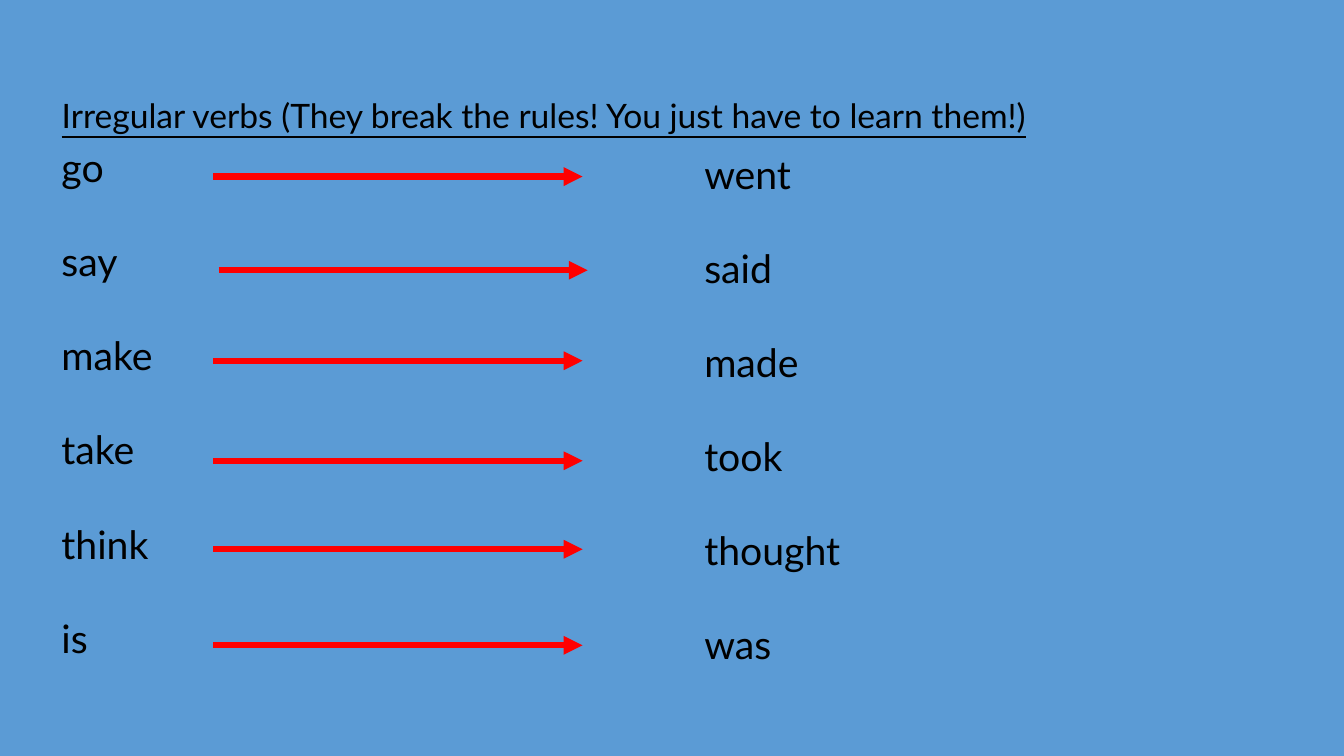
from dataclasses import dataclass

from lxml.etree import SubElement
from pptx import Presentation
from pptx.dml.color import RGBColor
from pptx.enum.shapes import MSO_CONNECTOR
from pptx.enum.text import MSO_ANCHOR, MSO_AUTO_SIZE, PP_ALIGN
from pptx.oxml.ns import qn
from pptx.slide import Slide
from pptx.text.text import TextFrame
from pptx.util import Cm, Pt

FONT = "Lato"
BLUE, RED, BLACK = "5B9BD5", "FF0000", "000000"
HEADING = "Irregular verbs (They break the rules! You just have to learn them!)"
HEADING_SIZE, VERB_SIZE, VERB_GAP = 24, 28, 33.6
ARROW_LENGTH, ARROW_WIDTH = 9.3, 4.5
COLUMN_HEIGHT = 13.3


@dataclass
class Verb:
    """A present and past form with the start of the arrow between them, in cm."""

    present: str
    past: str
    arrow_top: float
    arrow_left: float = 5.38


@dataclass
class Column:
    """The place of a list of verb forms, in cm."""

    left: float
    top: float
    width: float
    words: list[str]


VERBS = [
    Verb("go", "went", 4.45),
    Verb("say", "said", 6.81, 5.51),
    Verb("make", "made", 9.09),
    Verb("take", "took", 11.61),
    Verb("think", "thought", 13.84),
    Verb("is", "was", 16.26),
]
COLUMNS = [
    Column(1.3, 3.49, 4, [verb.present for verb in VERBS]),
    Column(17.5, 3.66, 12.75, [verb.past for verb in VERBS]),
]


def colour(value: str) -> RGBColor:
    """Turn a hex string into a colour."""
    return RGBColor.from_string(value)


def write_lines(frame: TextFrame, lines: list[str], size: float, gap: float = 0,
                underline: bool = False) -> None:
    """Fill a text frame with one left-aligned paragraph per line."""
    frame.word_wrap = True
    frame.auto_size = MSO_AUTO_SIZE.NONE
    frame.vertical_anchor = MSO_ANCHOR.TOP
    for index, line in enumerate(lines):
        paragraph = frame.add_paragraph() if index else frame.paragraphs[0]
        paragraph.alignment = PP_ALIGN.LEFT
        paragraph.space_after = Pt(gap)
        run = paragraph.add_run()
        run.text = line
        run.font.name = FONT
        run.font.size = Pt(size)
        run.font.underline = underline
        run.font.color.rgb = colour(BLACK)


def add_heading(slide: Slide) -> None:
    """Place and format the title."""
    title = slide.shapes.title
    title.left, title.top, title.width, title.height = Cm(1.3), Cm(2.26), Cm(31.55), Cm(1.27)
    write_lines(title.text_frame, [HEADING], HEADING_SIZE, underline=True)


def add_column(slide: Slide, column: Column) -> None:
    """Add a list of verb forms."""
    box = slide.shapes.add_textbox(Cm(column.left), Cm(column.top),
                                   Cm(column.width), Cm(COLUMN_HEIGHT))
    write_lines(box.text_frame, column.words, VERB_SIZE, VERB_GAP)


def add_arrow(slide: Slide, verb: Verb) -> None:
    """Add the arrow from the present to the past form."""
    top = Cm(verb.arrow_top)
    arrow = slide.shapes.add_connector(MSO_CONNECTOR.STRAIGHT, Cm(verb.arrow_left), top,
                                       Cm(verb.arrow_left + ARROW_LENGTH), top)
    arrow.line.color.rgb = colour(RED)
    arrow.line.width = Pt(ARROW_WIDTH)
    SubElement(arrow.line._get_or_add_ln(), qn("a:tailEnd"), type="triangle")
    SubElement(arrow._element.spPr, qn("a:effectLst"))


def main() -> None:
    """Build the slide and save it."""
    presentation = Presentation()
    presentation.slide_width, presentation.slide_height = Cm(33.87), Cm(19.05)
    slide = presentation.slides.add_slide(presentation.slide_layouts.get_by_name("Title Only"))
    slide.background.fill.solid()
    slide.background.fill.fore_color.rgb = colour(BLUE)
    add_heading(slide)
    for column in COLUMNS:
        add_column(slide, column)
    for verb in VERBS:
        add_arrow(slide, verb)
    presentation.save("out.pptx")


if __name__ == "__main__":
    main()
